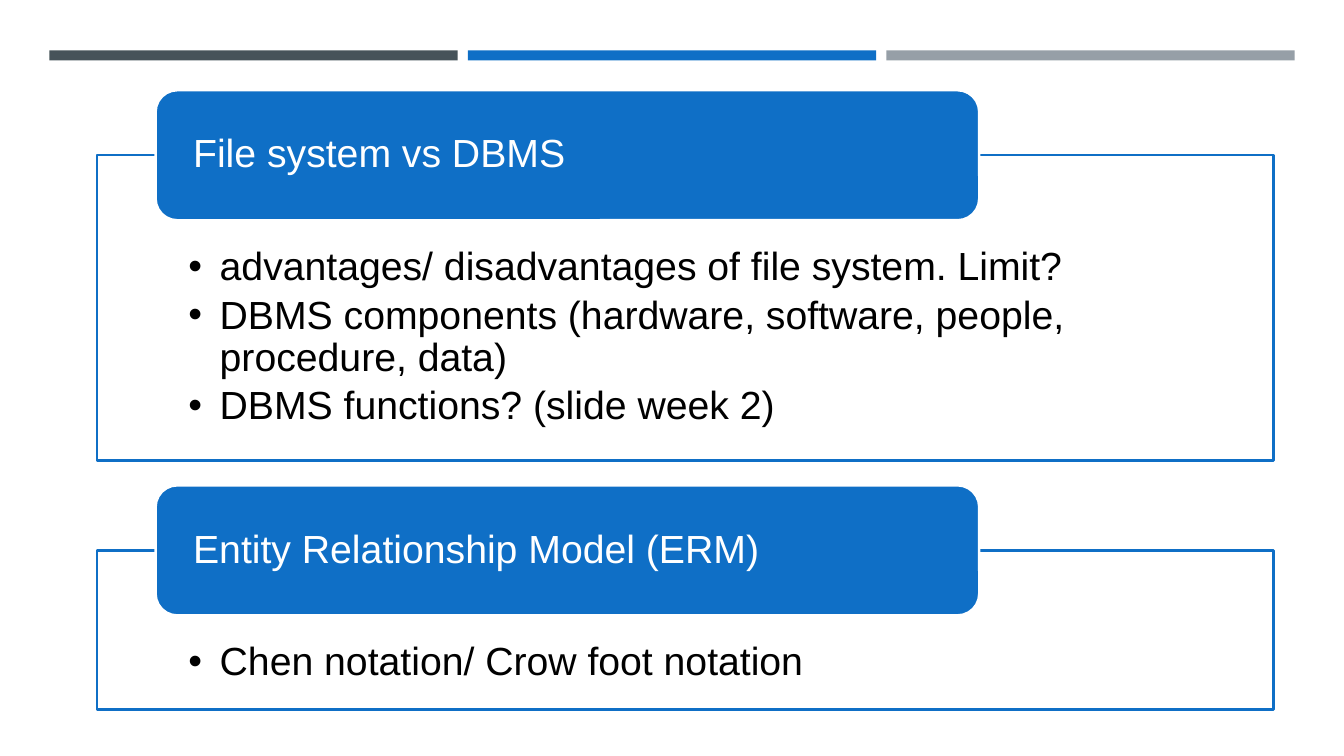
from lxml import etree
from pptx import Presentation, util as u
from pptx.dml.color import RGBColor
from pptx.enum import shapes, text
from pptx.oxml.ns import qn

BLUE = RGBColor(0x0F, 0x6F, 0xC6)
SLATE = RGBColor(0x46, 0x53, 0x59)
GREY = RGBColor(0x96, 0x9F, 0xA7)
WHITE = RGBColor(0xFF, 0xFF, 0xFF)
BLACK = RGBColor(0, 0, 0)

SLIDE_W, SLIDE_H = 13.33, 7.5
BARS = (0.49, 0.5, 12.35, 0.1)
BAR_GAP = 0.1
HEADER_H = 1.29
PANEL_X, PANEL_W = 0.96, 11.67
PANELS = [
    (1.54, 3.03, "File system vs DBMS", [
        "advantages/ disadvantages of file system. Limit?",
        "DBMS components (hardware, software, people, procedure, data)",
        "DBMS functions? (slide week 2)",
    ]),
    (5.46, 1.58, "Entity Relationship Model (ERM)", [
        "Chen notation/ Crow foot notation",
    ]),
]


def add_box(slide, kind, box, fill, line=None):
    sp = slide.shapes.add_shape(kind, *(u.Inches(v) for v in box))
    sp.shadow.inherit = False
    sp.fill.solid()
    sp.fill.fore_color.rgb = fill
    if line is None:
        sp.line.fill.background()
    else:
        sp.line.color.rgb = line
        sp.line.width = u.Pt(1.75)
    return sp


def write(sp, lines, color, insets, anchor, space_after, bullet_indent=0):
    """Fill a shape with left-aligned paragraphs, bulleted if an indent is given."""
    tf = sp.text_frame
    tf.word_wrap = True
    tf.vertical_anchor = anchor
    for side, inset in zip(("left", "top", "right", "bottom"), insets):
        setattr(tf, f"margin_{side}", u.Inches(inset))
    para_format = {"alignment": text.PP_ALIGN.LEFT, "line_spacing": 0.9,
                   "space_after": u.Pt(space_after)}
    font_format = {"name": "Arial", "size": u.Pt(28)}
    for i, line in enumerate(lines):
        p = tf.add_paragraph() if i else tf.paragraphs[0]
        for name, value in para_format.items():
            setattr(p, name, value)
        r = p.add_run()
        r.text = line
        for name, value in font_format.items():
            setattr(r.font, name, value)
        r.font.color.rgb = color
        if bullet_indent:
            p.level = 1
            pPr = p._p.get_or_add_pPr()
            pPr.set("marL", str(u.Inches(bullet_indent)))
            pPr.set("indent", str(-u.Inches(bullet_indent)))
            etree.SubElement(pPr, qn("a:buFont")).set("typeface", "Arial")
            etree.SubElement(pPr, qn("a:buChar")).set("char", "•")


def add_bars(slide, box):
    x, y, w, h = box
    colors = (SLATE, BLUE, GREY)
    bar_w = (w - BAR_GAP * (len(colors) - 1)) / len(colors)
    for i, color in enumerate(colors):
        add_box(slide, shapes.MSO_SHAPE.RECTANGLE,
                (x + i * (bar_w + BAR_GAP), y, bar_w, h), color)


def add_panel(slide, box, heading, points):
    """Draw an outlined list with its heading straddling the top edge."""
    x, y, w, h = box
    body = add_box(slide, shapes.MSO_SHAPE.RECTANGLE, box, WHITE, BLUE)
    rgb = body.fill._xPr.find(qn("a:solidFill"))[0]
    etree.SubElement(rgb, qn("a:alpha")).set("val", "90000")
    write(body, points, BLACK, (0.91, 0.91, 0.91, 0.22),
          text.MSO_ANCHOR.TOP, 4.2, bullet_indent=0.31)

    header = add_box(slide, shapes.MSO_SHAPE.ROUNDED_RECTANGLE,
                     (x + 0.05 * w, y - HEADER_H / 2, 0.7 * w, HEADER_H), BLUE, WHITE)
    write(header, [heading], WHITE, (0.31, 0, 0.31, 0), text.MSO_ANCHOR.MIDDLE, 0)


def main():
    prs = Presentation()
    prs.slide_width = u.Inches(SLIDE_W)
    prs.slide_height = u.Inches(SLIDE_H)
    slide = prs.slides.add_slide(prs.slide_layouts[6])
    add_bars(slide, BARS)
    for y, h, heading, points in PANELS:
        add_panel(slide, (PANEL_X, y, PANEL_W, h), heading, points)
    prs.save("out.pptx")


if __name__ == "__main__":
    main()
